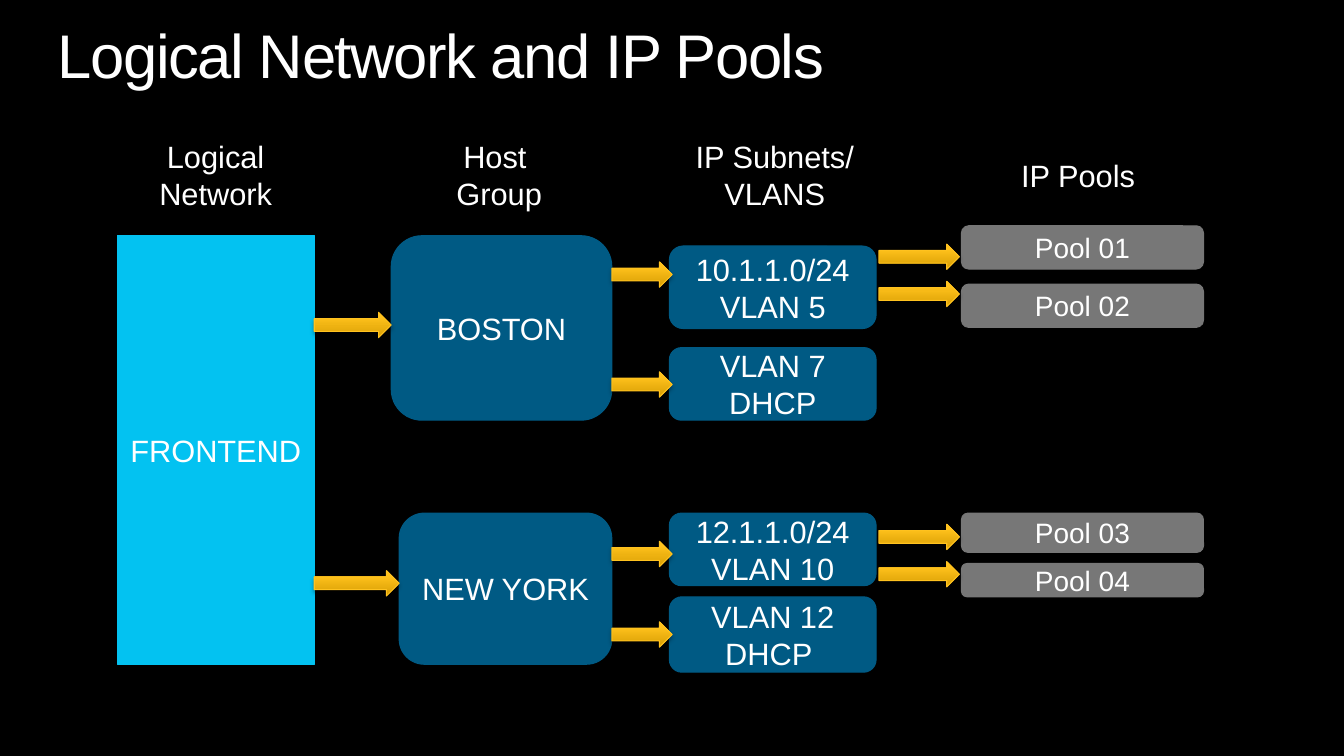
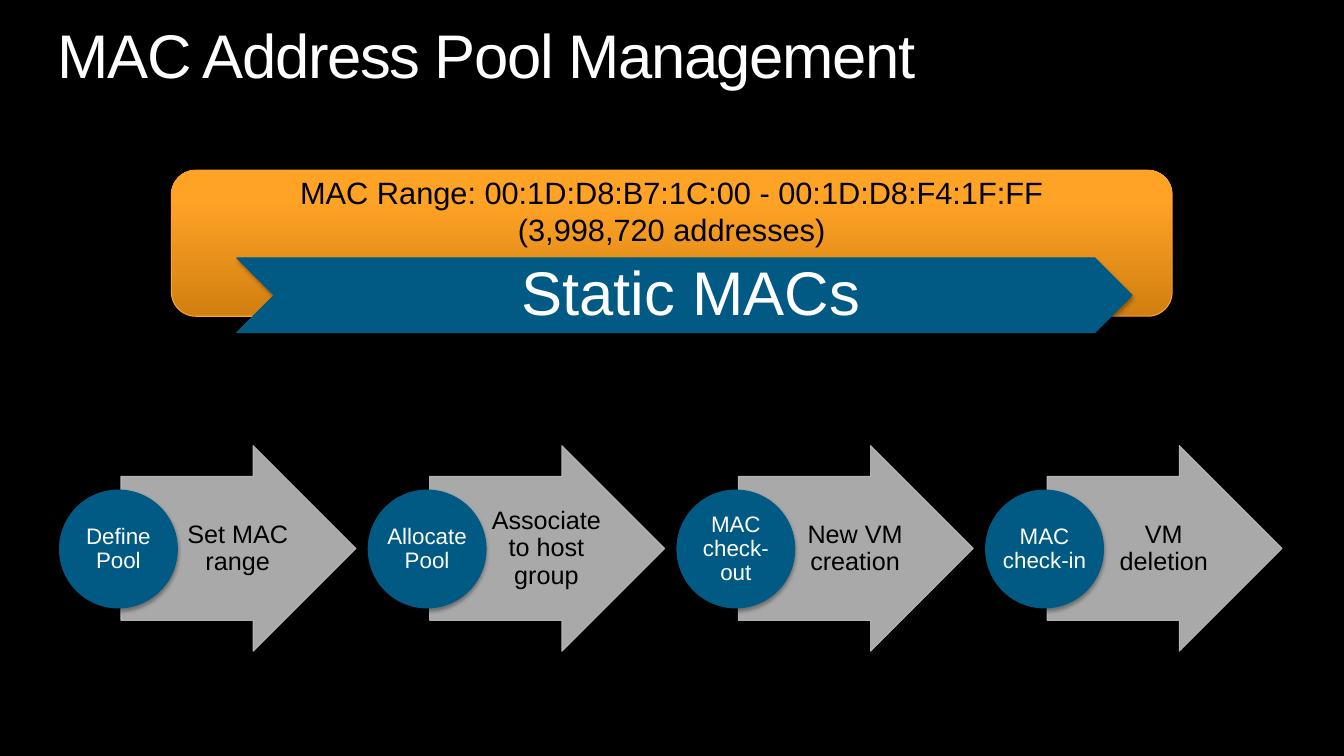
from lxml import etree
from pptx import Presentation
from pptx import util as u
from pptx.dml.color import RGBColor
from pptx.enum import shapes, text
from pptx.oxml import ns

Cm, Pt = u.Cm, u.Pt
Preset = shapes.MSO_SHAPE

WHITE, BLACK = "FFFFFF", "000000"
CYAN, BLUE, GREY, SILVER = "03C2F1", "005A84", "777777", "BDBCBD"
GOLD = ("D79D03", "FFC21C", "FFC21F")
ORANGE = ("D17F11", "FFA326", "F9A32E")
TITLE_BOX = (1.45, 0.64, 30.96, 1.7)
INSETS = (0.25, 0.13, 0.25, 0.13)

HEADERS = [
    (0.48, 4.01, ["Logical Network"]),
    (6.85, 5.56, ["Host ", "Group"]),
    (13.97, 5.21, ["IP Subnets/", "VLANS"]),
    (21.64, 5.16, ["IP Pools"]),
]
BOSTON = {
    "site": ("BOSTON", 1.94, 4.65),
    "site_arrow": 1.93,
    "subnets": [(0.26, 2.08, ["10.1.1.0/24", "VLAN 5"]), (2.82, 1.83, ["VLAN 7", "DHCP"])],
    "subnet_arrows": [0.66, 3.43],
    "pools": [(-0.25, 1.09, "Pool 01"), (1.22, 1.09, "Pool 02")],
    "pool_arrows": [0.21, 1.15],
}
NEW_YORK = {
    "site": ("NEW YORK", 2.14, 3.81),
    "site_arrow": 1.45,
    "subnets": [(0, 1.83, ["12.1.1.0/24", "VLAN 10"]), (2.11, 1.9, ["VLAN 12", "DHCP "])],
    "subnet_arrows": [0.71, 2.74],
    "pools": [(0, 0.99, "Pool 03"), (1.27, 0.84, "Pool 04")],
    "pool_arrows": [0.28, 1.22],
}
STEPS = [
    ("Define Pool", "Set MAC range"),
    ("Allocate Pool", "Associate to host group"),
    ("MAC check-out", "New VM creation"),
    ("MAC check-in", "VM deletion"),
]


def colour(value):
    return RGBColor.from_string(value)


def apply_format(target, values):
    for name, value in values.items():
        setattr(target, name, value)


def place(left, top, width, height):
    return [Cm(value) for value in (left, top, width, height)]


def write(shape, lines, size=22, ink=WHITE, insets=INSETS, spacing=None,
          align=text.PP_ALIGN.CENTER, anchor=text.MSO_ANCHOR.MIDDLE):
    frame = shape.text_frame
    sides = ("margin_left", "margin_top", "margin_right", "margin_bottom")
    apply_format(frame, dict(zip(sides, map(Cm, insets))))
    apply_format(frame, {"word_wrap": True, "vertical_anchor": anchor,
                         "auto_size": text.MSO_AUTO_SIZE.NONE})
    for number, line in enumerate(lines):
        para = frame.add_paragraph() if number else frame.paragraphs[0]
        apply_format(para, {"alignment": align, "line_spacing": spacing})
        span = para.add_run()
        span.text = line
        apply_format(span.font, {"name": "Arial", "size": Pt(size)})
        span.font.color.rgb = colour(ink)
    return frame


def add_shadow(shape):
    effects = shape._element.spPr.find(ns.qn("a:effectLst"))
    shadow = etree.SubElement(effects, ns.qn("a:outerShdw"), blurRad="39370",
                              dist="22860", dir="5400000", rotWithShape="0")
    shade = etree.SubElement(shadow, ns.qn("a:srgbClr"), val=BLACK)
    etree.SubElement(shade, ns.qn("a:alpha"), val="35000")


def add_block(page, preset, box, paint, shadow=True):
    shape = page.shapes.add_shape(preset, *place(*box))
    if isinstance(paint, tuple):
        dark, light, edge = paint
        shape.fill.gradient()
        shape.fill.gradient_angle = 90
        for stop, position, value in zip(shape.fill.gradient_stops, (0, 0.8), (dark, light)):
            stop.position = position
            stop.color.rgb = colour(value)
    else:
        edge = paint
        shape.fill.solid()
        shape.fill.fore_color.rgb = colour(paint)
    shape.line.color.rgb = colour(edge)
    shape.line.width = Pt(0.75)
    shape.shadow.inherit = False
    if shadow:
        add_shadow(shape)
    return shape


def add_label(page, box, lines, **style):
    write(page.shapes.add_textbox(*place(*box)), lines, **style)


def add_flow_arrow(page, left, top, width):
    add_block(page, Preset.RIGHT_ARROW, (left, top, width, 0.64), GOLD)


def add_page(deck, title):
    page = deck.slides.add_slide(deck.slide_layouts[5])
    heading = page.shapes.title
    apply_format(heading, dict(zip(("left", "top", "width", "height"), place(*TITLE_BOX))))
    frame = write(heading, [title], size=44, insets=(0, 0, 0, 0), spacing=0.9,
                  align=text.PP_ALIGN.LEFT, anchor=text.MSO_ANCHOR.TOP)
    frame.paragraphs[0].runs[0].font._element.set("spc", "-100")
    return page


def add_headers(page, left, top):
    for offset, width, lines in HEADERS:
        add_label(page, (left + offset, top, width, 1.8), lines)


def add_branch(page, left, top, branch):
    name, indent, height = branch["site"]
    site = add_block(page, Preset.ROUNDED_RECTANGLE,
                     (left + indent, top, 7.5 - indent, height), BLUE)
    write(site, [name])
    for offset, tall, lines in branch["subnets"]:
        subnet = add_block(page, Preset.ROUNDED_RECTANGLE,
                           (left + 8.95, top + offset, 5.21, tall), BLUE)
        write(subnet, lines)
    for offset, tall, label in branch["pools"]:
        pool = add_block(page, Preset.ROUNDED_RECTANGLE,
                         (left + 16.31, top + offset, 6.1, tall), GREY)
        write(pool, [label], size=20)
    add_flow_arrow(page, left, top + branch["site_arrow"], indent)
    for offset in branch["subnet_arrows"]:
        add_flow_arrow(page, left + 7.5, top + offset, 1.52)
    for offset in branch["pool_arrows"]:
        add_flow_arrow(page, left + 14.23, top + offset, 2.03)


def add_network_page(deck):
    page = add_page(deck, "Logical Network and IP Pools")
    left, top = 2.95, 5.94
    add_headers(page, left, 3.51)
    network = add_block(page, Preset.RECTANGLE, (left, top, 4.98, 10.8), CYAN)
    write(network, ["FRONTEND"])
    add_branch(page, left + 4.97, top, BOSTON)
    add_branch(page, left + 4.97, top + 6.99, NEW_YORK)


def add_range_banner(page, left, top, width, height):
    banner = add_block(page, Preset.ROUNDED_RECTANGLE, (left, top, width, height), ORANGE)
    write(banner, ["MAC Range: 00:1D:D8:B7:1C:00 - 00:1D:D8:F4:1F:FF", "(3,998,720 addresses)"],
          ink=BLACK, insets=(0.25, 0, 0.25, 1.63))
    ribbon = add_block(page, Preset.CHEVRON,
                       (left + 1.65, top + 2.21, width - 2.66, 1.88), BLUE)
    write(ribbon, ["Static MACs"], size=44, insets=(0.48, 0.15, 0.15, 0.15), spacing=0.9)


def add_step(page, left, top, stage, detail):
    arrow = add_block(page, Preset.RIGHT_ARROW, (left + 1.55, top, 5.92, 5.18), SILVER, shadow=False)
    arrow.adjustments[0] = 0.7
    for tone in arrow._element.spPr.iter(ns.qn("a:srgbClr")):
        etree.SubElement(tone, ns.qn("a:alpha"), val="90000")
    add_label(page, (left + 3.04, top + 0.78, 2.9, 3.63), [detail], size=18, ink=BLACK,
              insets=(0, 0.03, 0, 0.03), spacing=0.9)
    circle = add_block(page, Preset.OVAL, (left, top + 1.12, 2.97, 2.97), BLUE)
    write(circle, [stage], size=16, insets=(0, 0, 0, 0), spacing=0.9)


def add_mac_page(deck):
    page = add_page(deck, "MAC Address Pool Management")
    add_range_banner(page, 4.32, 4.29, 25.22, 3.68)
    for number, (stage, detail) in enumerate(STEPS):
        add_step(page, 1.5 + 7.78 * number, 11.23, stage, detail)


def main():
    deck = Presentation()
    apply_format(deck, {"slide_width": Cm(33.87), "slide_height": Cm(19.05)})
    backdrop = deck.slide_master.background.fill
    backdrop.solid()
    backdrop.fore_color.rgb = colour(BLACK)
    add_network_page(deck)
    add_mac_page(deck)
    deck.save("out.pptx")


if __name__ == "__main__":
    main()
